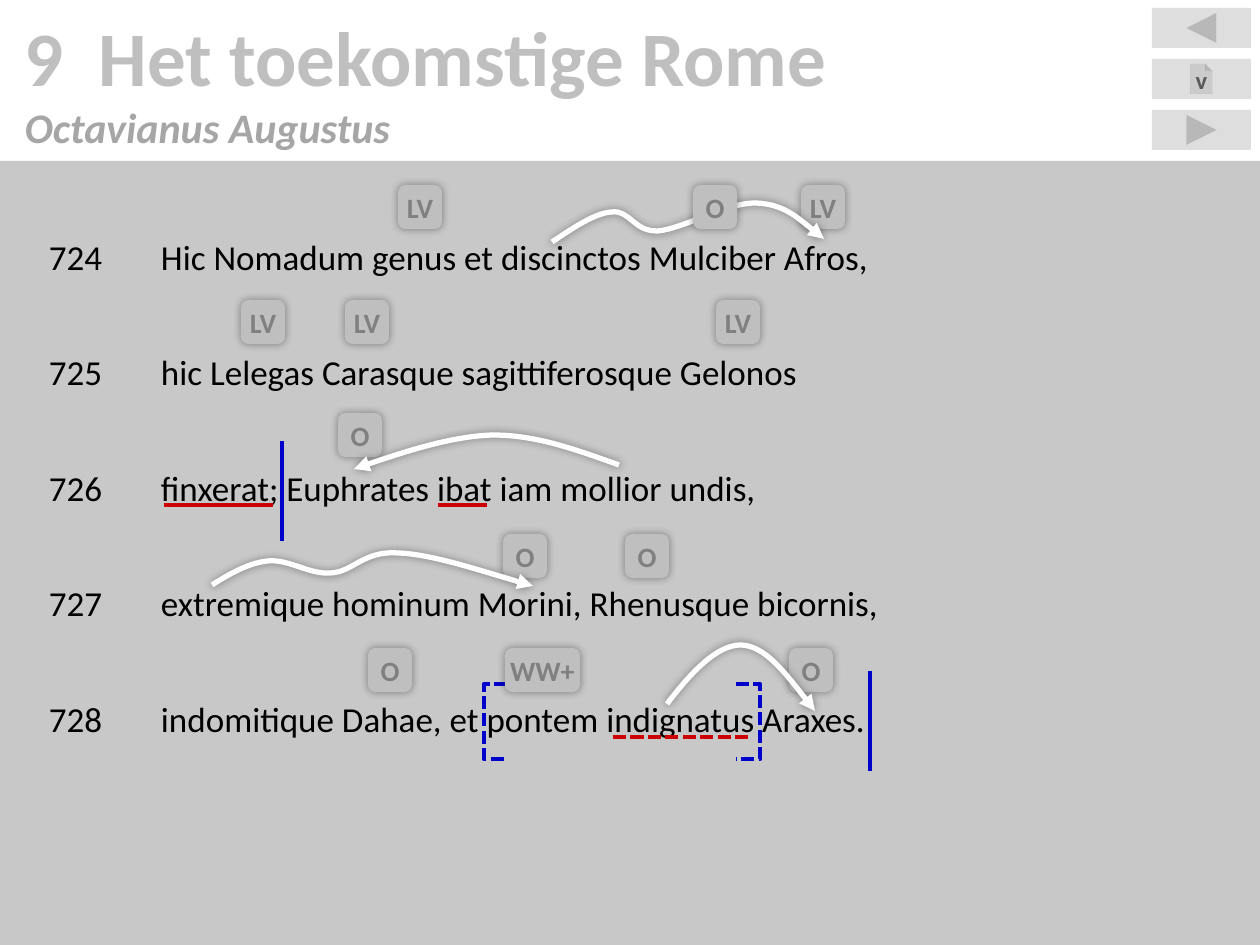
from lxml import etree
from pptx import Presentation
from pptx import util as u
from pptx.dml.color import RGBColor
from pptx.enum import dml, shapes, text
from pptx.oxml.ns import qn

PX = 914400 / 126
KIND = shapes.MSO_SHAPE
THEME = {
    "font": "Calibri",
    "gray": "BFBFBF", "sub": "A6A6A6", "mark": "808080", "icon": "595959",
    "ink": "000000", "white": "FFFFFF", "blue": "0000CC", "red": "CC0000",
    "title": 44, "second": 24, "verse": 20, "label": 16, "small": 14,
    "thin": 2.5, "thick": 3,
}


def write(shape, words, size, color, bold=False, italic=False, align="LEFT",
          anchor="TOP", inset=(0, 0), wrap=True, after=0, hang=0, tab=0):
    """Add one paragraph; inset, hang and tab are in px."""
    frame = shape.text_frame
    frame.word_wrap = wrap
    frame.vertical_anchor = getattr(text.MSO_ANCHOR, anchor)
    frame.margin_left = frame.margin_right = int(inset[0] * PX)
    frame.margin_top = frame.margin_bottom = int(inset[1] * PX)
    para = frame.paragraphs[-1]
    if para.runs:
        para = frame.add_paragraph()
    para.alignment = getattr(text.PP_ALIGN, align)
    para.space_after = u.Pt(after)
    props = para._p.get_or_add_pPr()
    if hang:
        props.set("marL", str(int(hang * PX)))
        props.set("indent", str(-int(hang * PX)))
    if tab:
        tabs = etree.SubElement(props, qn("a:tabLst"))
        etree.SubElement(tabs, qn("a:tab"), pos=str(int(tab * PX)), algn="l")
    run = para.add_run()
    run.text = words
    font = run.font
    font.name, font.size = THEME["font"], u.Pt(THEME[size])
    font.bold, font.italic = bold, italic
    font.color.rgb = RGBColor.from_string(THEME[color])


def style(shape, fill=None, alpha=100, line=None, width="thin", dash=None,
          arrow=False, glow=False):
    """Set fill, outline and soft shadow of a shape or connector."""
    props = shape._element.spPr
    if fill:
        shape.fill.solid()
        shape.fill.fore_color.rgb = RGBColor.from_string(THEME[fill])
        if alpha < 100:
            tone = props.find(qn("a:solidFill"))[0]
            etree.SubElement(tone, qn("a:alpha"), val=str(alpha * 1000))
    elif hasattr(shape, "fill"):
        shape.fill.background()
    if line:
        shape.line.color.rgb = RGBColor.from_string(THEME[line])
        shape.line.width = u.Pt(THEME[width])
        if dash:
            shape.line.dash_style = dash
        if arrow:
            etree.SubElement(props.find(qn("a:ln")), qn("a:tailEnd"), type="triangle")
    else:
        shape.line.fill.background()
    effect = etree.SubElement(props, qn("a:effectLst"))
    if glow:
        soft = etree.SubElement(effect, qn("a:outerShdw"), blurRad="63500",
                                dist="0", dir="0", algn="ctr", rotWithShape="0")
        tone = etree.SubElement(soft, qn("a:srgbClr"), val=THEME["ink"])
        etree.SubElement(tone, qn("a:alpha"), val="40000")


deck = Presentation()
deck.slide_width, deck.slide_height = int(1260 * PX), int(945 * PX)
slide = deck.slides.add_slide(deck.slide_layouts[6])
draw = slide.shapes

# Heading
head = draw.add_textbox(0, 0, int(1260 * PX), int(161 * PX))
top = dict(bold=True, anchor="MIDDLE", inset=(25, 25), hang=84)
write(head, "9  Het toekomstige Rome", "title", "gray", **top)
write(head, "Octavianus Augustus", "second", "sub", italic=True, **top)

# Verses
body = draw.add_shape(KIND.RECTANGLE, 0, int(161 * PX), int(1260 * PX), int(784 * PX))
style(body, "gray", 85)
verses = [
    "Hic Nomadum genus et discinctos Mulciber Afros,",
    "hic Lelegas Carasque sagittiferosque Gelonos",
    "finxerat; Euphrates ibat iam mollior undis,",
    "extremique hominum Morini, Rhenusque bicornis,",
    "indomitique Dahae, et pontem indignatus Araxes.",
]
for num, verse in enumerate(verses, 724):
    write(body, f"{num}\t{verse}", "verse", "ink", inset=(49, 74), after=42, tab=112)

# Buttons
for row, name in enumerate(["BACK_OR_PREVIOUS", "DOCUMENT", "FORWARD_OR_NEXT"]):
    kind = getattr(KIND, "ACTION_BUTTON_" + name)
    key = draw.add_shape(kind, int(1152 * PX), int((8 + 51 * row) * PX),
                         int(99 * PX), int(40 * PX))
    style(key, "gray", 50)
    if name == "DOCUMENT":
        write(key, "v", "small", "icon", bold=True, align="CENTER", inset=(12, 6))

# Labels: x, y, words, width, above the arrows
chips = [
    (398, 185, "LV", 44, False), (801, 185, "LV", 44, False), (693, 185, "O", 44, True),
    (241, 300, "LV", 44, False), (345, 300, "LV", 44, False), (716, 300, "LV", 44, False),
    (338, 413, "O", 44, False),
    (503, 534, "O", 44, False), (625, 534, "O", 44, False),
    (368, 648, "O", 44, False), (789, 648, "O", 44, False), (505, 648, "WW+", 75, True),
]
front = []
for x, y, words, wide, above in chips:
    chip = draw.add_shape(KIND.ROUNDED_RECTANGLE, int(x * PX), int(y * PX),
                          int(wide * PX), int(44 * PX))
    style(chip, "gray", glow=True)
    write(chip, words, "label", "mark", bold=True, align="CENTER",
          anchor="MIDDLE", wrap=False)
    if above:
        front.append(chip)

# Sentence breaks and verb underlines
rules = [
    (282, 441, 282, 541, "blue", None),
    (870, 671, 870, 771, "blue", None),
    (164, 505, 273, 505, "red", None),
    (438, 505, 487, 505, "red", None),
    (613, 737, 752, 737, "red", dml.MSO_LINE.SQUARE_DOT),
]
for *ends, tint, dash in rules:
    rule = draw.add_connector(shapes.MSO_CONNECTOR.STRAIGHT, *(int(n * PX) for n in ends))
    # SQUARE_DOT is sysDot in the file format, so the dashes are named there
    style(rule, line=tint, dash=dash)
    if dash:
        rule._element.spPr.find(".//" + qn("a:prstDash")).set("val", "sysDash")

# Brackets
for tip, side in [(507, 484), (736, 760)]:
    pen = draw.build_freeform(tip, 684, PX)
    pen.add_line_segments([(side, 684), (side, 759), (tip, 759)], close=False)
    style(pen.convert_to_shape(), line="blue", dash=dml.MSO_LINE.SQUARE_DOT)

# Arrows: a start, then two handles and an end for each curve
arrows = [
    [(552, 242), (573, 228), (595, 213), (612, 212), (630, 210), (634, 232), (658, 231),
     (682, 229), (727, 203), (755, 203), (783, 204), (803, 222), (824, 239)],
    [(619, 465), (577, 450), (537, 435), (493, 435), (449, 436), (362, 466), (354, 469)],
    [(212, 585), (231, 573), (249, 563), (268, 561), (289, 559), (310, 575), (331, 573),
     (353, 572), (363, 551), (397, 553), (430, 554), (481, 571), (533, 586)],
    [(667, 704), (690, 674), (716, 645), (741, 645), (765, 646), (790, 679), (815, 711)],
]
for start, *rest in arrows:
    pen = draw.build_freeform(*start, PX)
    pen.add_line_segments(rest, close=False)
    arc = pen.convert_to_shape()
    steps = list(arc._element.iter(qn("a:lnTo")))
    for one, two, end in zip(steps[::3], steps[1::3], steps[2::3]):
        bend = etree.Element(qn("a:cubicBezTo"))
        one.addprevious(bend)
        for step in (one, two, end):
            bend.append(step[0])
            step.getparent().remove(step)
    style(arc, line="white", width="thick", arrow=True, glow=True)

for chip in front:
    draw._spTree.append(chip._element)

deck.save("out.pptx")
